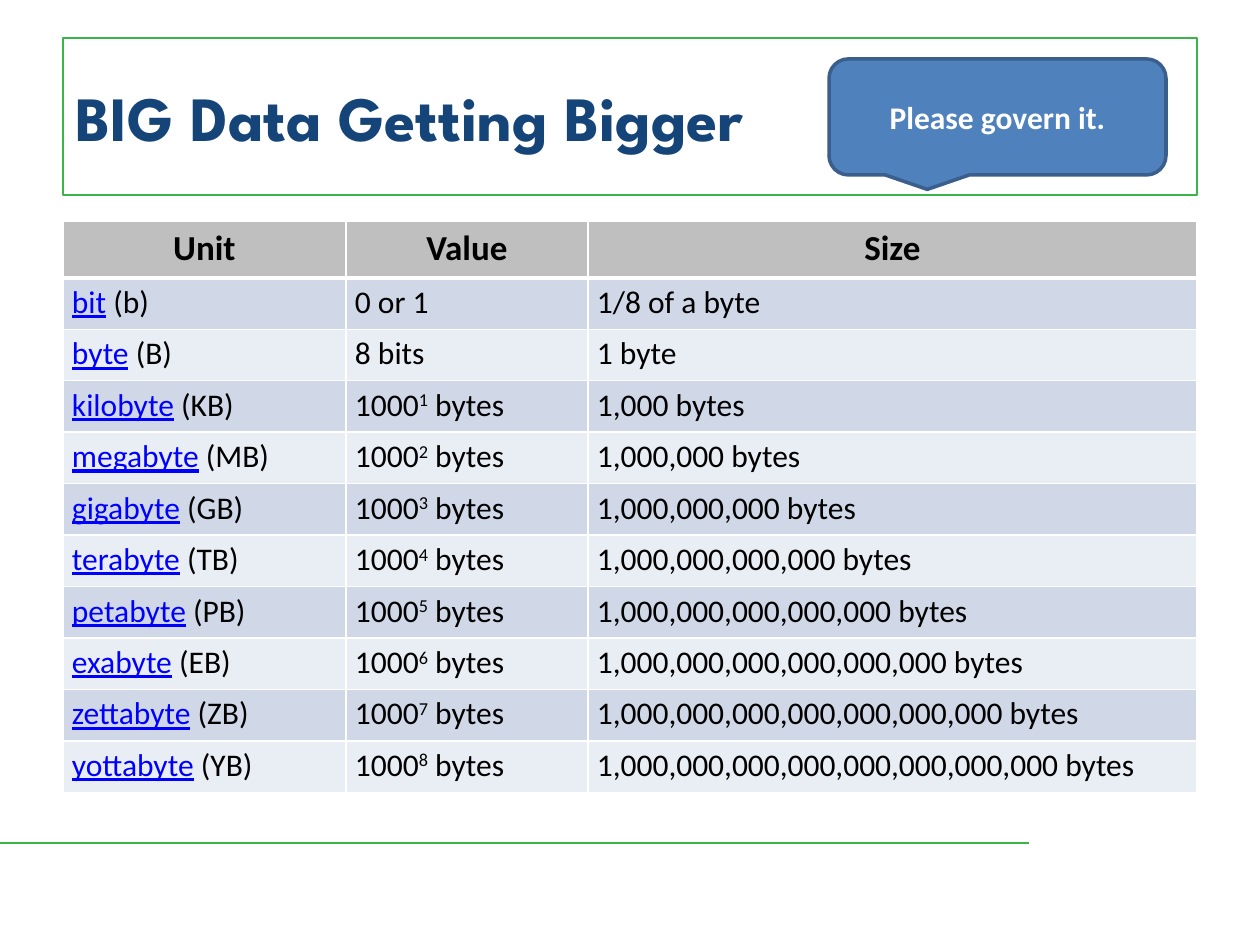
"""Build a slide that lists the units of data, from bit to yottabyte."""
from typing import NamedTuple

from lxml.etree import SubElement
from pptx import Presentation
from pptx.dml.color import RGBColor
from pptx.enum.shapes import MSO_CONNECTOR, MSO_SHAPE
from pptx.enum.text import MSO_ANCHOR, PP_ALIGN
from pptx.oxml.ns import qn
from pptx.util import Pt

SCALE = 914400 / 126
HUES = {
    "green": "39B54A", "navy": "154578", "blue": "4F81BD", "edge": "3A5F8C",
    "head": "BFBFBF", "dark": "D0D8E8", "pale": "E9EDF4",
    "link": "0000FF", "ink": "000000", "white": "FFFFFF",
}
COLS = (283, 242, 609)
HEADS = ("Unit", "Value", "Size")
NAMES = ("kilo", "mega", "giga", "tera", "peta", "exa", "zetta", "yotta")


class Run(NamedTuple):
    text: str
    size: int = 18
    hue: str = "ink"
    bold: bool = False
    line: bool = False
    raised: bool = False
    font: str = "Calibri"


class Box(NamedTuple):
    form: MSO_SHAPE
    area: tuple[int, int, int, int]
    fill: str | None
    edge: str
    width: int
    align: PP_ALIGN
    run: Run


class Cell(NamedTuple):
    runs: list[Run]
    fill: str
    align: PP_ALIGN
    top: int
    base: int
    rule: int


BOXES = (
    Box(MSO_SHAPE.RECTANGLE, (63, 38, 1134, 157), None, "green", 1, PP_ALIGN.LEFT,
        Run("BIG Data Getting Bigger", 36, "navy", True, font="League Spartan")),
    Box(MSO_SHAPE.ROUNDED_RECTANGULAR_CALLOUT, (829, 59, 337, 116), "blue", "edge", 2,
        PP_ALIGN.CENTER, Run("Please govern it.", 18, "white", True)),
)


def px(num: int) -> int:
    return round(num * SCALE)


def tint(hue: str) -> RGBColor:
    return RGBColor.from_string(HUES[hue])


def write(frame, runs: list[Run], align: PP_ALIGN) -> None:
    para = frame.paragraphs[0]
    para.alignment = align
    for item in runs:
        run = para.add_run()
        run.text = item.text
        font = run.font
        font.name, font.size = item.font, Pt(item.size)
        font.bold, font.underline = item.bold, item.line
        font.color.rgb = tint(item.hue)
        if item.raised:
            run._r.get_or_add_rPr().set("baseline", "30000")


def draw_box(slide, box: Box) -> None:
    shape = slide.shapes.add_shape(box.form, *map(px, box.area))
    shape.shadow.inherit = False
    if box.fill:
        shape.fill.solid()
        shape.fill.fore_color.rgb = tint(box.fill)
    else:
        shape.fill.background()
    shape.line.color.rgb = tint(box.edge)
    shape.line.width = Pt(box.width)
    frame = shape.text_frame
    frame.word_wrap = True
    frame.vertical_anchor = MSO_ANCHOR.MIDDLE
    write(frame, [box.run], box.align)


def draw_cell(spot, cell: Cell) -> None:
    spot.margin_left = spot.margin_right = px(9)
    spot.margin_top, spot.margin_bottom = px(cell.top), px(cell.base)
    spot.vertical_anchor = MSO_ANCHOR.MIDDLE
    props = spot._tc.get_or_add_tcPr()
    for side, width in zip("LRTB", (1, 1, 1, cell.rule)):
        line = SubElement(props, qn(f"a:ln{side}"), w=str(Pt(width)))
        SubElement(SubElement(line, qn("a:solidFill")), qn("a:srgbClr"), val=HUES["white"])
    spot.fill.solid()
    spot.fill.fore_color.rgb = tint(cell.fill)
    write(spot.text_frame, cell.runs, cell.align)


def unit(name: str, sign: str) -> list[Run]:
    return [Run(name, hue="link", line=True), Run(f" ({sign})")]


def power(num: int) -> list[Run]:
    return [Run("1000"), Run(str(num), raised=True), Run(" bytes")]


def list_rows() -> list[list[Cell]]:
    body = [
        [unit("bit", "b"), [Run("0 or 1")], [Run("1/8 of a byte")]],
        [unit("byte", "B"), [Run("8 bits")], [Run("1 byte")]],
    ]
    for num, name in enumerate(NAMES, 1):
        sign = f"{name[0].upper()}B"
        body.append([unit(f"{name}byte", sign), power(num), [Run(f"{1000 ** num:,} bytes")]])
    rows = [[Cell([Run(head, 20, bold=True)], "head", PP_ALIGN.CENTER, 6, 8, 3) for head in HEADS]]
    for num, row in enumerate(body):
        fill = "pale" if num % 2 else "dark"
        rows.append([Cell(runs, fill, PP_ALIGN.LEFT, 1, 3, 1) for runs in row])
    return rows


def draw_table(slide, rows: list[list[Cell]]) -> None:
    area = (63, 221, sum(COLS), 566)
    table = slide.shapes.add_table(len(rows), len(COLS), *map(px, area)).table
    table.first_row = table.horz_banding = False
    for col, width in zip(table.columns, COLS):
        col.width = px(width)
    for y, row in enumerate(rows):
        for x, cell in enumerate(row):
            draw_cell(table.cell(y, x), cell)


def draw_rule(slide) -> None:
    ends = map(px, (0, 843, 1029, 843))
    rule = slide.shapes.add_connector(MSO_CONNECTOR.STRAIGHT, *ends)
    rule.line.color.rgb = tint("green")
    rule.line.width = Pt(1.5)
    SubElement(rule._element.spPr, qn("a:effectLst"))


def main() -> None:
    deck = Presentation()
    deck.slide_width, deck.slide_height = px(1260), px(945)
    slide = deck.slides.add_slide(deck.slide_layouts[6])
    draw_rule(slide)
    draw_table(slide, list_rows())
    for box in BOXES:
        draw_box(slide, box)
    deck.save("out.pptx")


if __name__ == "__main__":
    main()
